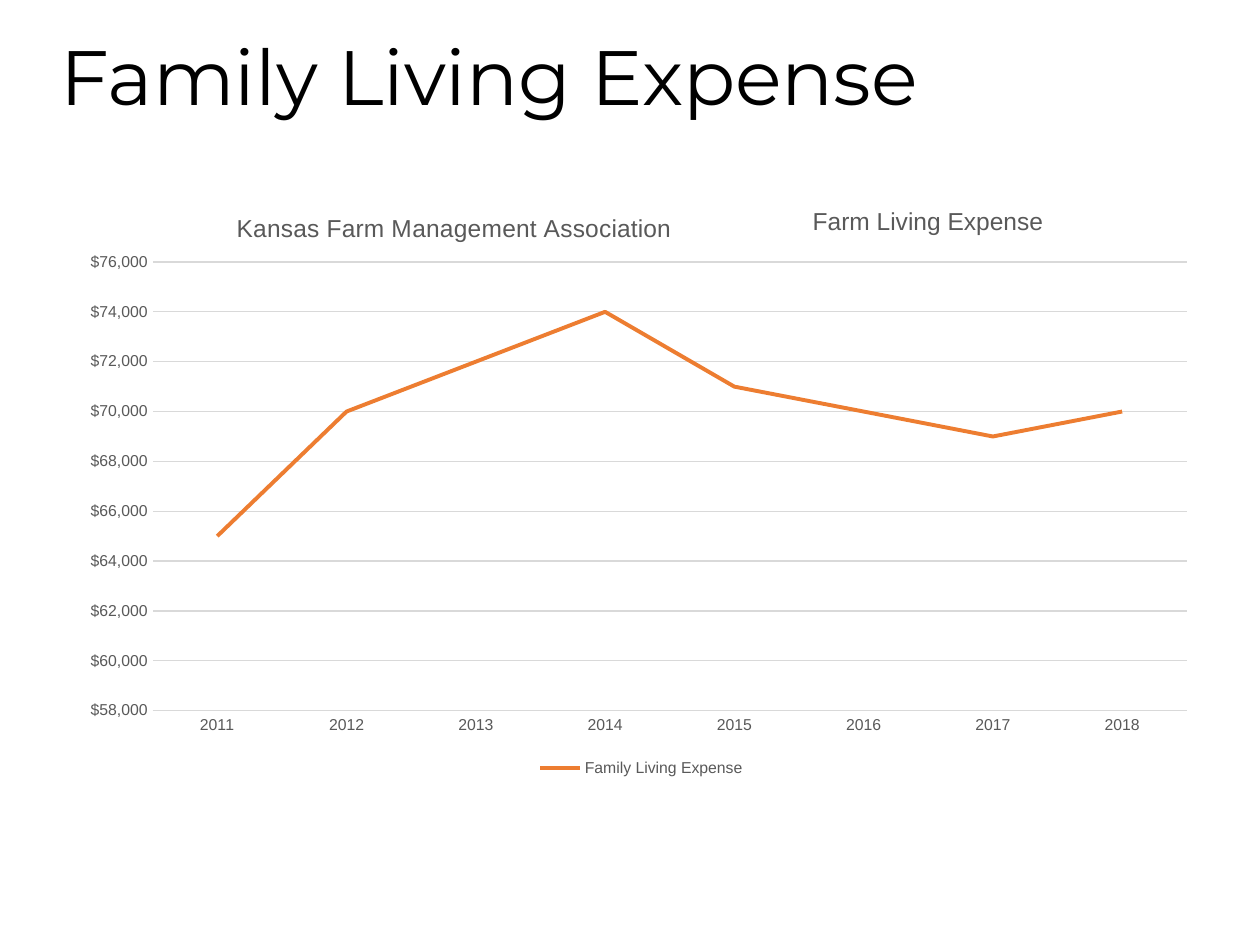
import pptx
import pptx.util
import pptx.chart.data
import pptx.dml.color
import pptx.enum.chart
import pptx.enum.text
import pptx.oxml
import pptx.oxml.ns

W, H = 10, 7.5
GRAY, RULE, ORANGE = "595959", "D9D9D9", "ED7D31"
YEARS = [str(y) for y in range(2011, 2019)]
EXPENSES = [65000, 70000, 72000, 74000, 71000, 70000, 69000, 70000]


def color(value):
    return pptx.dml.color.RGBColor.from_string(value)


def place(*shares):
    return [pptx.util.Inches(v * n) for v, n in zip(shares, (W, H, W, H))]


def style_font(font, name, size, value):
    font.name = name
    font.size = pptx.util.Pt(size)
    font.bold = False
    font.color.rgb = color(value)


def style_line(line, value, width):
    line.color.rgb = color(value)
    line.width = pptx.util.Pt(width)


def add_run(p, text, name, size, value):
    r = p.add_run()
    r.text = text
    style_font(r.font, name, size, value)


def set_layout(element, index, **shares):
    for old in element.findall(pptx.oxml.ns.qn("c:layout")):
        element.remove(old)
    ns = pptx.oxml.ns.nsdecls("c")
    inner = '<c:layoutTarget val="inner"/>' if "w" in shares else ""
    modes = "".join(f'<c:{k}Mode val="edge"/>' for k in shares if k in "xy")
    values = "".join(f'<c:{k} val="{v}"/>' for k, v in shares.items())
    element.insert(index, pptx.oxml.parse_xml(
        f"<c:layout {ns}><c:manualLayout>{inner}{modes}{values}"
        "</c:manualLayout></c:layout>"))


def add_title(s, text):
    sp = s.shapes.title
    sp.left, sp.top, sp.width, sp.height = place(0.038, 0, 0.927, 0.17)
    tf = sp.text_frame
    tf.vertical_anchor = pptx.enum.text.MSO_ANCHOR.MIDDLE
    p = tf.paragraphs[0]
    p.alignment = pptx.enum.text.PP_ALIGN.LEFT
    p.line_spacing = 0.9
    add_run(p, text, "Montserrat", 44, "000000")


def add_caption(s, text):
    sp = s.shapes.add_textbox(*place(0.645, 0.218, 0.22, 0.036))
    tf = sp.text_frame
    tf.word_wrap = True
    tf.margin_left = tf.margin_right = tf.margin_top = tf.margin_bottom = 0
    add_run(tf.paragraphs[0], text, "Arial", 14, GRAY)


def style_axis(axis):
    none = pptx.enum.chart.XL_TICK_MARK.NONE
    axis.major_tick_mark = axis.minor_tick_mark = none
    style_font(axis.tick_labels.font, "Arial", 9, GRAY)


def add_expense_chart(s, heading):
    data = pptx.chart.data.CategoryChartData(number_format='"$"#,##0')
    data.categories = YEARS
    data.add_series("Family Living Expense", EXPENSES)
    chart = s.shapes.add_chart(pptx.enum.chart.XL_CHART_TYPE.LINE,
                               *place(0.058, 0.195, 0.902, 0.633), data).chart
    style_font(chart.font, "Arial", 10, "000000")

    title = chart.chart_title
    add_run(title.text_frame.paragraphs[0], heading, "Arial", 14, GRAY)
    title_xml = chart.element.find(".//" + pptx.oxml.ns.qn("c:title"))
    plot_xml = chart.element.find(".//" + pptx.oxml.ns.qn("c:plotArea"))
    set_layout(title_xml, 1, x=0.14, y=0.04)
    set_layout(plot_xml, 0, x=0.07, y=0.13, w=0.91, h=0.75)

    style_axis(chart.category_axis)
    style_line(chart.category_axis.format.line, RULE, 0.75)
    axis = chart.value_axis
    style_axis(axis)
    axis.minimum_scale, axis.maximum_scale, axis.major_unit = 58000, 76000, 2000
    axis.tick_labels.number_format = '"$"#,##0'
    axis.tick_labels.number_format_is_linked = False
    axis.format.line.fill.background()
    style_line(axis.major_gridlines.format.line, RULE, 0.75)

    chart.has_legend = True
    chart.legend.position = pptx.enum.chart.XL_LEGEND_POSITION.BOTTOM
    chart.legend.include_in_layout = False
    style_font(chart.legend.font, "Arial", 9, GRAY)

    plot = chart.plots[0]
    plot.vary_by_categories = False
    series = plot.series[0]
    series.smooth = False
    series.marker.style = pptx.enum.chart.XL_MARKER_STYLE.NONE
    style_line(series.format.line, ORANGE, 2.25)


def main():
    prs = pptx.Presentation()
    prs.slide_width = pptx.util.Inches(W)
    prs.slide_height = pptx.util.Inches(H)
    s = prs.slides.add_slide(prs.slide_layouts[5])
    add_title(s, "Family Living Expense")
    add_expense_chart(s, "Kansas Farm Management Association")
    add_caption(s, "Farm Living Expense")
    prs.save("out.pptx")


if __name__ == "__main__":
    main()
